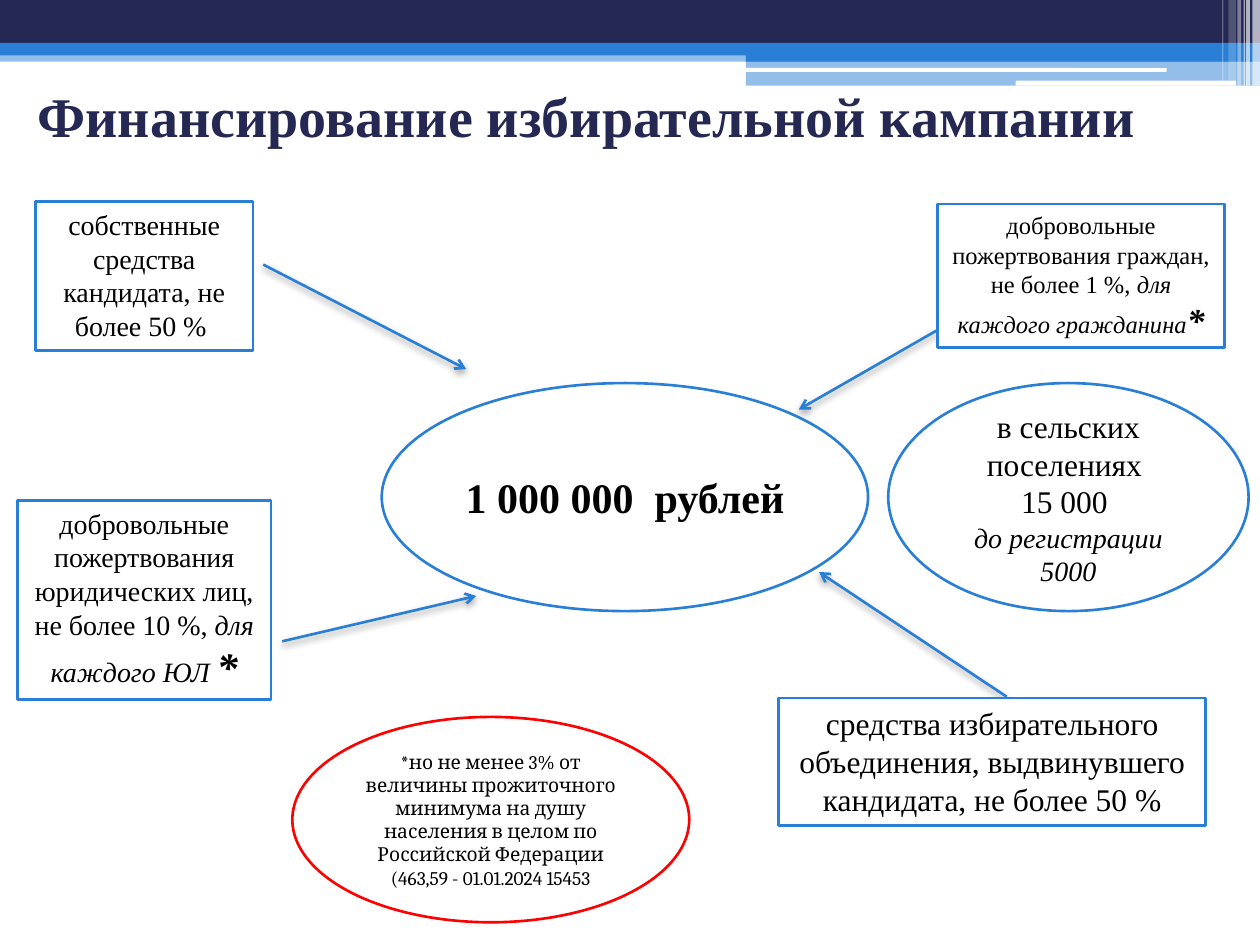
from lxml import etree
from pptx import Presentation
from pptx.dml.color import RGBColor
from pptx.enum import shapes, text
from pptx.oxml import parse_xml
from pptx.oxml.ns import nsdecls, qn
from pptx.util import Inches, Pt

THEME = {
    "navy": "242852", "blue": "297FD5", "white": "FFFFFF", "black": "000000", "red": "FF0000",
    "font": "Times New Roman", "note_font": "Cambria", "line": 1.5,
    "title": 32, "total": 24, "large": 18, "body": 16, "small": 14, "note": 11, "star": 20,
}
RECT = shapes.MSO_SHAPE.RECTANGLE
ROUND = shapes.MSO_SHAPE.ROUNDED_RECTANGLE
OVAL = shapes.MSO_SHAPE.OVAL

BANDS = [
    (RECT, (0, 0.4, 10, 0.09), "blue", 50),
    (RECT, (0, 0, 10, 0.34), "navy", 100),
    (RECT, (0, 0.34, 10, 0.1), "blue", 100),
    (RECT, (5.92, 0.39, 4.08, 0.1), "blue", 100),
    (RECT, (5.92, 0.48, 4.08, 0.2), "blue", 50),
    (ROUND, (5.91, 0.54, 3.35, 0.03), "white", 100),
    (ROUND, (8.06, 0.64, 1.75, 0.04), "white", 100),
]
STRIPES = [
    (9.94, 0.06, 0.68, 65), (9.89, 0.03, 0.68, 65), (9.87, 0.01, 0.68, 60),
    (9.82, 0.03, 0.68, 40), (9.75, 0.06, 0.64, 20), (9.7, 0.01, 0.64, 30),
]
TITLE = [[("Финансирование избирательной кампании", {"size": "title", "color": "navy", "bold": True})]]
ARROWS = [
    ((2.09, 2.1), (3.7, 2.93)),
    ((7.44, 2.62), (6.34, 3.25)),
    ((2.24, 5.09), (3.78, 4.73)),
    ((7.99, 5.53), (6.5, 4.54)),
]
SOURCES = [
    ((0.28, 1.6, 1.73, 1.18), [[("собственные средства кандидата, не более 50 % ", {})]]),
    ((7.44, 1.62, 2.28, 1.14), [[
        ("добровольные пожертвования граждан, не более 1 %, ", {"size": "small"}),
        ("для каждого гражданина", {"size": "small", "italic": True}),
        ("*", {"size": "star", "italic": True, "bold": True})]]),
    ((0.14, 3.97, 2.01, 1.58), [[
        ("добровольные пожертвования юридических лиц, не более 10 %, ", {}),
        ("для каждого ЮЛ ", {"italic": True}),
        ("*", {"size": "total", "italic": True, "bold": True})]]),
    ((6.18, 5.54, 3.39, 1.01), [[
        ("средства избирательного объединения, выдвинувшего кандидата, не более 50 %", {"size": "large"})]]),
]
LIMITS = [
    ((3.03, 3.04, 3.86, 1.81), "blue", [[("1 000 000  рублей ", {"size": "total", "bold": True})]]),
    ((2.32, 5.69, 3.15, 1.63), "red", [[
        ("*но не менее 3% от величины прожиточного минимума на душу населения в целом по "
         "Российской Федерации (463,59 - 01.01.2024 15453", {"size": "note", "font": "note_font"})]]),
    ((7.05, 3.04, 2.86, 1.81), "blue", [
        [("в сельских поселениях ", {"size": "large"})],
        [("15 000 ", {"size": "large"})],
        [("до регистрации 5000", {"italic": True})]]),
]


def rgb(name):
    return RGBColor.from_string(THEME[name])


def add_run(p, content, size="body", color="black", font="font", bold=False, italic=False):
    r = p.add_run()
    r.text = content
    r.font.name = THEME[font]
    r.font.size = Pt(THEME[size])
    r.font.color.rgb = rgb(color)
    r.font.bold = bold
    r.font.italic = italic


def write(sp, paragraphs, anchor=text.MSO_ANCHOR.MIDDLE, align=text.PP_ALIGN.CENTER):
    tf = sp.text_frame
    tf.word_wrap = True
    tf.vertical_anchor = anchor
    for i, runs in enumerate(paragraphs):
        p = tf.add_paragraph() if i else tf.paragraphs[0]
        p.alignment = align
        for content, style in runs:
            add_run(p, content, **style)


def add_block(s, kind, box, fill="white", line=None, opacity=100):
    sp = s.shapes.add_shape(kind, *map(Inches, box))
    sp.shadow.inherit = False
    sp.fill.solid()
    sp.fill.fore_color.rgb = rgb(fill)
    if opacity < 100:
        color = sp.fill._xPr.find(qn("a:solidFill"))[0]
        etree.SubElement(color, qn("a:alpha")).set("val", str(opacity * 1000))
    if line:
        sp.line.color.rgb = rgb(line)
        sp.line.width = Pt(THEME["line"])
    else:
        sp.line.fill.background()
    return sp


def add_arrow(s, start, end):
    sp = s.shapes.add_connector(shapes.MSO_CONNECTOR.STRAIGHT, *map(Inches, start + end))
    sp.line.color.rgb = rgb("blue")
    sp.line.width = Pt(THEME["line"])
    etree.SubElement(sp.line._get_or_add_ln(), qn("a:tailEnd")).set("type", "arrow")
    sp._element.spPr.append(parse_xml(
        f'<a:effectLst {nsdecls("a")}><a:outerShdw blurRad="{Pt(4.1)}" dist="{Pt(2)}" dir="5400000" '
        f'rotWithShape="0"><a:srgbClr val="{THEME["black"]}"><a:alpha val="40000"/></a:srgbClr>'
        '</a:outerShdw></a:effectLst>'))


def main():
    prs = Presentation()
    prs.slide_width, prs.slide_height = Inches(10), Inches(7.5)
    s = prs.slides.add_slide(prs.slide_layouts[6])
    for kind, box, fill, opacity in BANDS:
        add_block(s, kind, box, fill, opacity=opacity)
    for left, width, height, opacity in STRIPES:
        add_block(s, RECT, (left, 0, width, height), opacity=opacity)
    title = s.shapes.add_textbox(*map(Inches, (0.2, 0.52, 9, 0.79)))
    write(title, TITLE, align=text.PP_ALIGN.LEFT)
    for start, end in ARROWS:
        add_arrow(s, start, end)
    for box, paragraphs in SOURCES:
        sp = add_block(s, RECT, box, line="blue")
        write(sp, paragraphs, anchor=text.MSO_ANCHOR.TOP)
        sp.text_frame.auto_size = text.MSO_AUTO_SIZE.SHAPE_TO_FIT_TEXT
    for box, line, paragraphs in LIMITS:
        write(add_block(s, OVAL, box, line=line), paragraphs)
    prs.save("out.pptx")


if __name__ == "__main__":
    main()
